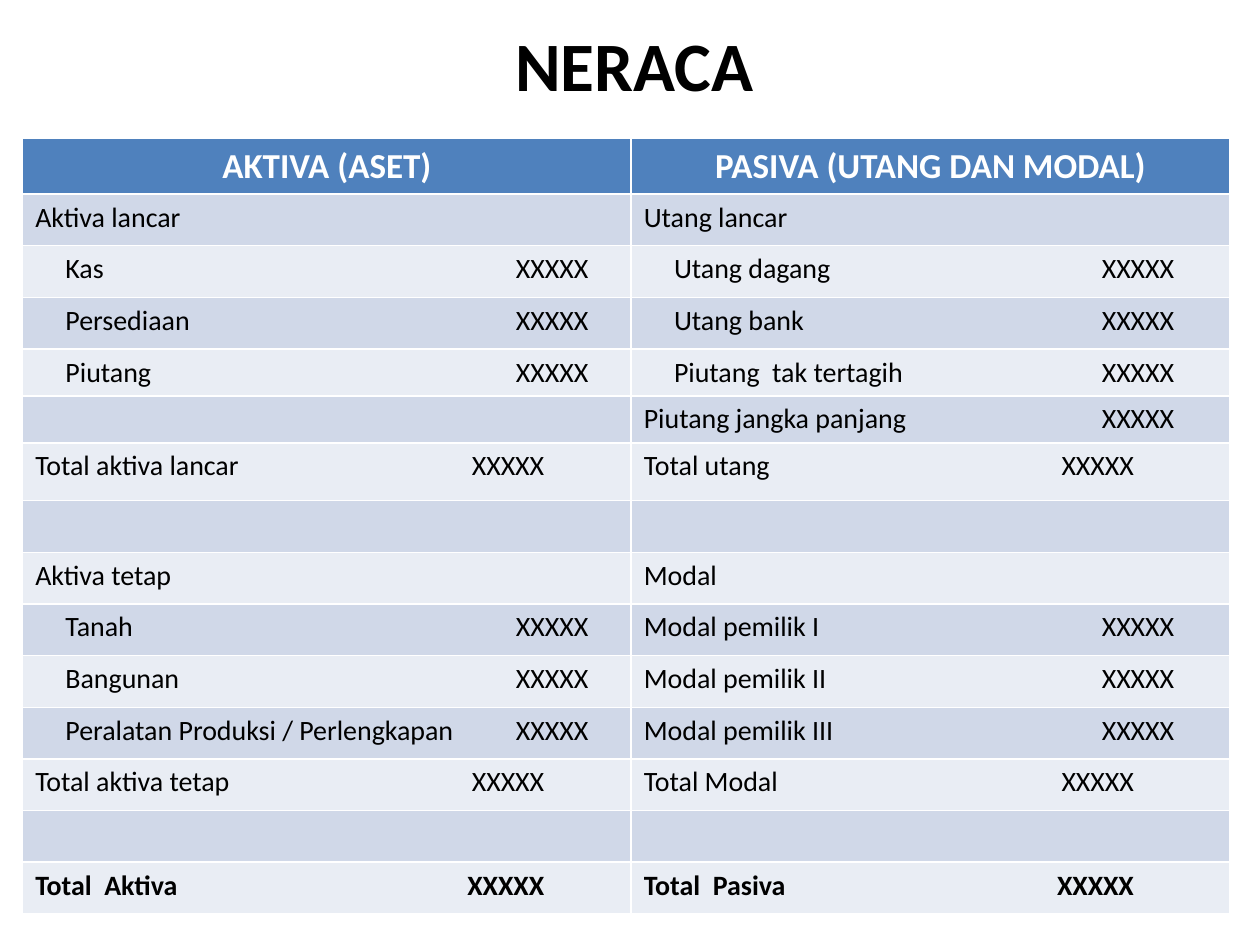
"""Builds a balance sheet slide with assets on the left and liabilities on the right."""
import lxml.etree
import pptx
import pptx.dml.color
import pptx.enum.text
import pptx.oxml.ns
import pptx.util

RGBColor = pptx.dml.color.RGBColor
BLACK = RGBColor(0x00, 0x00, 0x00)
WHITE = RGBColor(0xFF, 0xFF, 0xFF)
HEADER_BLUE = RGBColor(0x4F, 0x81, 0xBD)
BANDS = (RGBColor(0xD0, 0xD8, 0xE8), RGBColor(0xE9, 0xED, 0xF4))

FONT = "Calibri"
AMOUNT = "XXXXX"
MARGIN = 0.1
INDENT = 0.24
DETAIL_STOPS = (4.39, 4.21)
TOTAL_STOPS = (4.04, 3.89)
COLUMN_WIDTHS = (4.83, 4.75)
ROW_HEIGHTS = [0.44] + [0.41] * 3 + [0.37] * 2 + [0.46] + [0.41] * 8

HEADERS = ("AKTIVA (ASET)", "PASIVA (UTANG DAN MODAL)")
ENTRIES = [
    (("heading", "Aktiva lancar"), ("heading", "Utang lancar")),
    (("item", "Kas"), ("item", "Utang dagang")),
    (("item", "Persediaan"), ("item", "Utang bank")),
    (("item", "Piutang"), ("item", "Piutang  tak tertagih")),
    (("heading", ""), ("account", "Piutang jangka panjang")),
    (("total", "Total aktiva lancar"), ("total", "Total utang")),
    (("heading", ""), ("heading", "")),
    (("heading", "Aktiva tetap"), ("heading", "Modal")),
    (("item", "Tanah"), ("account", "Modal pemilik I")),
    (("item", "Bangunan"), ("account", "Modal pemilik II")),
    (("item", "Peralatan Produksi / Perlengkapan"), ("account", "Modal pemilik III")),
    (("total", "Total aktiva tetap"), ("total", "Total Modal")),
    (("heading", ""), ("heading", "")),
    (("grand total", "Total  Aktiva"), ("grand total", "Total  Pasiva")),
]


def write_text(frame, text, size=16, color=BLACK, bold=False, align=None, stop=None):
    """Write one formatted paragraph, with an optional right tab stop in inches."""
    paragraph = frame.paragraphs[0]
    if align is not None:
        paragraph.alignment = align
    if stop is not None:
        properties = paragraph._p.get_or_add_pPr()
        tab_list = lxml.etree.SubElement(properties, pptx.oxml.ns.qn("a:tabLst"))
        tab = lxml.etree.SubElement(tab_list, pptx.oxml.ns.qn("a:tab"))
        tab.set("pos", str(pptx.util.Inches(stop)))
        tab.set("algn", "r")
    if not text:
        ending = lxml.etree.SubElement(paragraph._p, pptx.oxml.ns.qn("a:endParaRPr"))
        ending.set("sz", str(size * 100))
        return
    run = paragraph.add_run()
    run.text = text
    run.font.name = FONT
    run.font.size = pptx.util.Pt(size)
    run.font.bold = bold
    run.font.color.rgb = color


class BalanceSheet:
    """Holds the presentation and the current slide, and draws its elements."""

    def __init__(self):
        self.presentation = pptx.Presentation()
        self.presentation.slide_width = pptx.util.Inches(10)
        self.presentation.slide_height = pptx.util.Inches(7.5)
        layout = self.presentation.slide_layouts[5]
        self.slide = self.presentation.slides.add_slide(layout)

    def title(self, text, left, top, width, height):
        """Place the title by inches and write its text."""
        shape = self.slide.shapes.title
        shape.left, shape.top, shape.width, shape.height = map(
            pptx.util.Inches, (left, top, width, height))
        frame = shape.text_frame
        frame.vertical_anchor = pptx.enum.text.MSO_ANCHOR.MIDDLE
        write_text(frame, text, size=39.6, bold=True,
                   align=pptx.enum.text.PP_ALIGN.CENTER)

    def table(self, left, top):
        """Add the two-sided table with its header and entries."""
        sizes = (left, top, sum(COLUMN_WIDTHS), sum(ROW_HEIGHTS))
        table = self.slide.shapes.add_table(
            len(ROW_HEIGHTS), len(COLUMN_WIDTHS), *map(pptx.util.Inches, sizes)).table
        for column, width in zip(table.columns, COLUMN_WIDTHS):
            column.width = pptx.util.Inches(width)
        for row, height in zip(table.rows, ROW_HEIGHTS):
            row.height = pptx.util.Inches(height)
        for side, header in enumerate(HEADERS):
            cell = table.cell(0, side)
            self.fill(cell, HEADER_BLUE)
            write_text(cell.text_frame, header, size=20, color=WHITE, bold=True,
                       align=pptx.enum.text.PP_ALIGN.CENTER)
        for row, entries in enumerate(ENTRIES):
            for side, (role, label) in enumerate(entries):
                cell = table.cell(row + 1, side)
                self.fill(cell, BANDS[row % 2])
                self.entry(cell, side, role, label)

    def fill(self, cell, color):
        """Give a cell a solid fill."""
        cell.fill.solid()
        cell.fill.fore_color.rgb = color

    def entry(self, cell, side, role, label):
        """Write a label and, unless it is a heading, its amount at a tab stop."""
        if role == "heading":
            write_text(cell.text_frame, label)
            return
        indent = INDENT if role == "item" else 0
        stops = TOTAL_STOPS if "total" in role else DETAIL_STOPS
        cell.margin_left = pptx.util.Inches(MARGIN + indent)
        write_text(cell.text_frame, f"{label}\t{AMOUNT}",
                   bold=role == "grand total", stop=stops[side] - indent)


def main():
    """Build and save the slide."""
    sheet = BalanceSheet()
    sheet.title("NERACA", 0.7, 0.16, 8.67, 0.7)
    sheet.table(0.18, 1.1)
    sheet.presentation.save("out.pptx")


if __name__ == "__main__":
    main()
